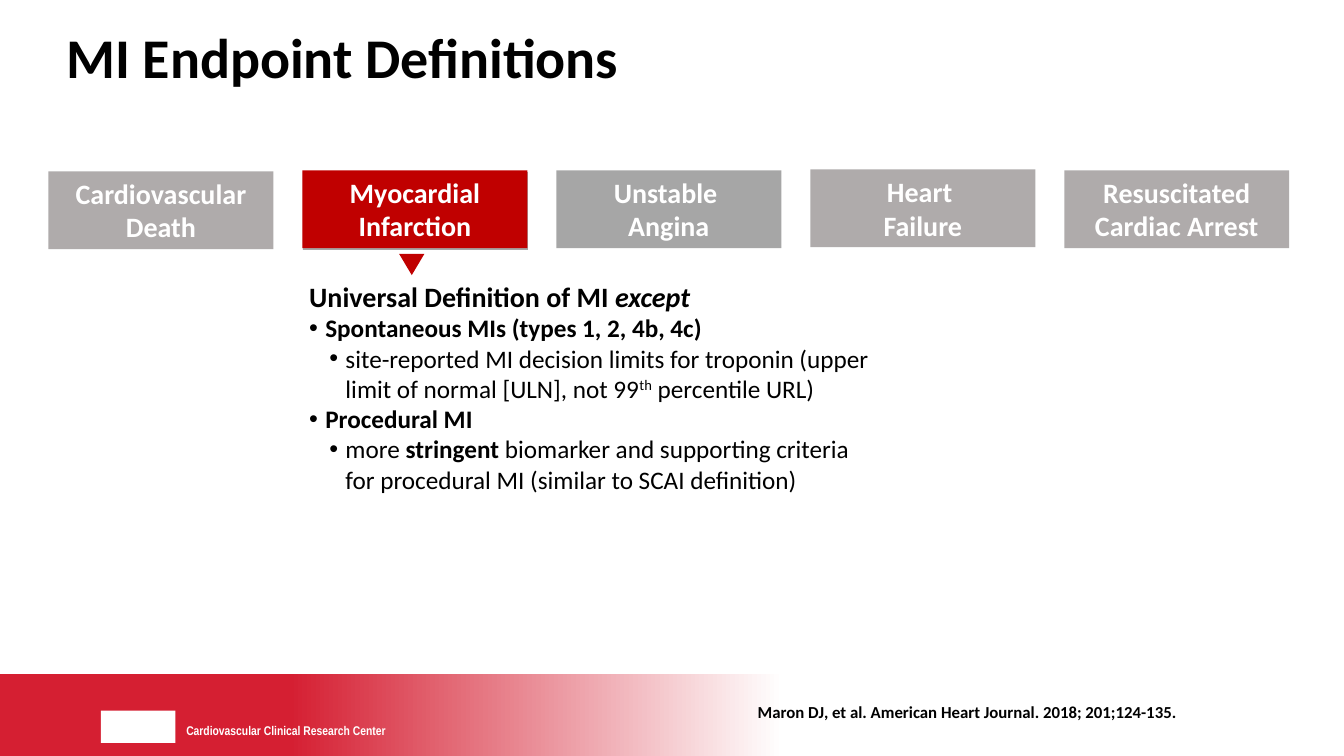
from lxml.etree import SubElement
from pptx import Presentation
from pptx.dml.color import RGBColor
from pptx.enum.shapes import MSO_SHAPE
from pptx.enum.text import MSO_ANCHOR, PP_ALIGN
from pptx.oxml.ns import qn
from pptx.util import Pt

WHITE, BLACK, RED = "FFFFFF", "000000", "C00000"
GREY, WARM_GREY = "A6A6A6", "AFABAB"


def add_box(left, top, width, height, fill=None, kind=MSO_SHAPE.RECTANGLE):
    """Add a filled, unlined shape, or a wrapping text box when no fill is given."""
    frame = [Pt(length) for length in (left, top, width, height)]
    if fill:
        shape = slide.shapes.add_shape(kind, *frame)
        shape.shadow.inherit = False
        shape.fill.solid()
        shape.fill.fore_color.rgb = RGBColor.from_string(fill)
        shape.line.fill.background()
    else:
        shape = slide.shapes.add_textbox(*frame)
    shape.text_frame.word_wrap = True
    shape.text_frame.vertical_anchor = MSO_ANCHOR.TOP
    return shape


def set_font(paragraph, size, color, bold=True, name="Calibri"):
    font = paragraph.font
    font.name, font.size, font.bold = name, Pt(size), bold
    font.color.rgb = RGBColor.from_string(color)


presentation = Presentation()
presentation.slide_width, presentation.slide_height = Pt(960), Pt(540)
slide = presentation.slides.add_slide(presentation.slide_layouts[6])

# Footer band fading to white, with a plain block for the emblem
band = add_box(-0.7, 481.7, 560.2, 58.3, RED)
band.fill.gradient()
band.fill.gradient_angle = 180
for stop, (position, color) in zip(band.fill.gradient_stops, [(0, WHITE), (0.63, "D51F32")]):
    stop.position = position
    stop.color.rgb = RGBColor.from_string(color)
add_box(72, 507.6, 53.3, 23, WHITE)

# Single-line texts
for text, frame, size, color, font_name in [
    ("Cardiovascular Clinical Research Center", (126, 512.6, 172, 10.8), 9, WHITE, "Arial Narrow"),
    ("Maron DJ, et al. American Heart Journal. 2018; 201;124-135.", (534.2, 497.5, 329, 21.6), 12, BLACK, "Calibri"),
    ("MI Endpoint Definitions", (40.3, 18, 893.5, 56), 40, BLACK, "Calibri"),
]:
    paragraph = add_box(*frame).text_frame.paragraphs[0]
    paragraph.text = text
    set_font(paragraph, size, color, name=font_name)
    if size == 40:
        paragraph.line_spacing = 0.9

# Row of endpoint cards, the current one in red over a grey edge
CARD_WIDTH, CARD_HEIGHT, CARD_STEP = 160.7, 55.6, 181.4
add_box(216.3, 123, CARD_WIDTH, CARD_HEIGHT, GREY)
for index, (lines, top, fill) in enumerate([
    (["Cardiovascular", "Death"], 122.4, WARM_GREY),
    (["Myocardial Infarction"], 121.7, RED),
    (["Unstable ", "Angina"], 121.7, GREY),
    (["Heart ", "Failure"], 121, WARM_GREY),
    (["Resuscitated Cardiac Arrest"], 121.7, WARM_GREY),
]):
    card = add_box(34.6 + index * CARD_STEP, top, CARD_WIDTH, CARD_HEIGHT, fill)
    card.text_frame.text = "\n".join(lines)
    for paragraph in card.text_frame.paragraphs:
        paragraph.alignment = PP_ALIGN.CENTER
        set_font(paragraph, 20, WHITE)

pointer = add_box(285.1, 181.4, 18, 15.1, RED, MSO_SHAPE.ISOSCELES_TRIANGLE)
pointer.rotation = 180

# Definition: (left margin, size, bold, [(text, run style)])
definition = [
    (0, 20, True, [("Universal Definition of MI ", ""), ("except", "italic")]),
    (11.5, 18, True, [("Spontaneous MIs (types 1, 2, 4b, 4c)", "")]),
    (25.9, 18, False, [
        ("site-reported MI decision limits for troponin (upper limit of normal [ULN], not 99", ""),
        ("th", "superscript"), (" percentile URL)", "")]),
    (11.5, 18, True, [("Procedural MI", "")]),
    (25.9, 18, False, [
        ("more ", ""), ("stringent", "bold"),
        (" biomarker and supporting criteria for procedural MI (similar to SCAI definition)", "")]),
]
text_frame = add_box(213.8, 195.8, 416.2, 162.7).text_frame
for index, (margin, size, bold, runs) in enumerate(definition):
    paragraph = text_frame.add_paragraph() if index else text_frame.paragraphs[0]
    if margin:
        properties = paragraph._p.get_or_add_pPr()
        properties.set("marL", str(Pt(margin)))
        properties.set("indent", str(Pt(-11.5)))
        SubElement(properties, qn("a:buFont")).set("typeface", "Arial")
        SubElement(properties, qn("a:buChar")).set("char", "•")
    set_font(paragraph, size, BLACK, bold)
    for text, style in runs:
        run = paragraph.add_run()
        run.text = text
        if style == "italic":
            run.font.italic = True
        elif style == "bold":
            run.font.bold = True
        elif style == "superscript":
            run.font._element.set("baseline", "30000")

presentation.save("out.pptx")
